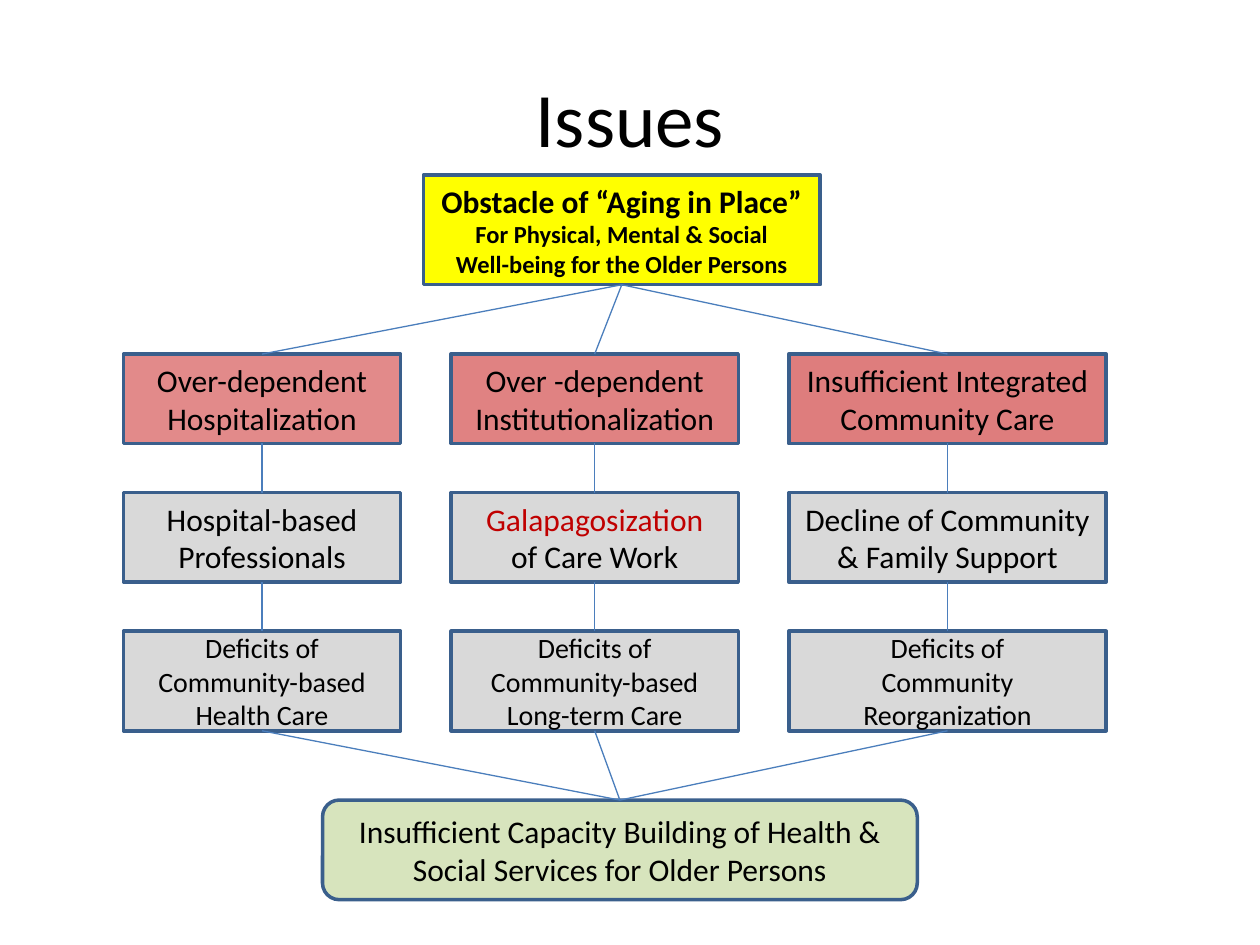
from lxml import etree
from pptx import Presentation, util as u
from pptx.dml.color import RGBColor
from pptx.enum import shapes, text
from pptx.oxml.ns import qn

prs = Presentation()
prs.slide_width, prs.slide_height = u.Inches(10), u.Inches(7.5)
s = prs.slides.add_slide(prs.slide_layouts[6])

TOP, BOTTOM = 0, 2  # connection sites of a rectangle
BLACK, RED, GREY = "000000", "C00000", "D9D9D9"
columns = [(0.98, 2.2), (3.58, 2.28), (6.26, 2.52)]  # left, width
rows = [(2.81, 0.71), (3.91, 0.71), (5.01, 0.79)]  # top, height
row_sizes = [18, 18, 16]
red_alphas = [46, 49, 51]  # opacity of the top row, percent
causes = [
    [["Over-dependent", "Hospitalization"],
     ["Over -dependent", "Institutionalization"],
     ["Insufficient Integrated Community Care"]],
    [["Hospital-based Professionals"],
     ["Galapagosization", "of Care Work"],
     ["Decline of Community & Family Support"]],
    [["Deficits of Community-based Health Care"],
     ["Deficits of", "Community-based", "Long-term Care"],
     ["Deficits of", "Community Reorganization"]],
]


def rgb(value):
    return RGBColor.from_string(value)


def box(left, top, width, height, lines, size, fill=None, kind="RECTANGLE"):
    """Add a centred text box, or a filled and outlined shape if fill is given."""
    at = [u.Inches(v) for v in (left, top, width, height)]
    if fill:
        sp = s.shapes.add_shape(shapes.MSO_SHAPE[kind], *at)
        sp.shadow.inherit = False
        sp.fill.solid()
        sp.fill.fore_color.rgb = rgb(fill)
        sp.line.color.rgb = rgb("3A5F8C")
        sp.line.width = u.Pt(2)
    else:
        sp = s.shapes.add_textbox(*at)
    tf = sp.text_frame
    tf.word_wrap = True
    tf.vertical_anchor = text.MSO_ANCHOR.MIDDLE
    tf.text = "\n".join(lines)
    for p in tf.paragraphs:
        p.alignment = text.PP_ALIGN.CENTER
        p.font.name, p.font.size = "Calibri", u.Pt(size)
        p.font.color.rgb = rgb(BLACK)
    return sp


box(0.5, 0.3, 9, 1.25, ["Issues"], 44)

obstacle = box(3.36, 1.39, 3.15, 0.87,
               ["Obstacle of “Aging in Place”",
                "For Physical, Mental & Social",
                "Well-being for the Older Persons"], 14, "FFFF00")
for p in obstacle.text_frame.paragraphs:
    p.font.bold = True
obstacle.text_frame.paragraphs[0].font.size = u.Pt(18)

grid = []
for i, (top, height) in enumerate(rows):
    grid.append([box(left, top, width, height, lines, row_sizes[i], GREY if i else RED)
                 for (left, width), lines in zip(columns, causes[i])])

for sp, alpha in zip(grid[0], red_alphas):
    color = sp.fill._xPr.find(qn("a:solidFill"))[0]
    etree.SubElement(color, qn("a:alpha")).set("val", str(alpha * 1000))
grid[1][1].text_frame.paragraphs[0].font.color.rgb = rgb(RED)

capacity = box(2.56, 6.35, 4.72, 0.79,
               ["Insufficient Capacity Building of Health & "
                "Social Services for Older Persons"],
               18, "D7E4BD", "ROUNDED_RECTANGLE")

for column in zip(*grid):
    chain = [obstacle, *column, capacity]
    for upper, lower in zip(chain, chain[1:]):
        c = s.shapes.add_connector(shapes.MSO_CONNECTOR.STRAIGHT, 0, 0, 0, 0)
        c.begin_connect(upper, BOTTOM)
        c.end_connect(lower, TOP)
        c.line.color.rgb = rgb("4B7EBC")
        c.line.width = u.Pt(0.75)
        etree.SubElement(c._element.spPr, qn("a:effectLst"))

prs.save("out.pptx")
